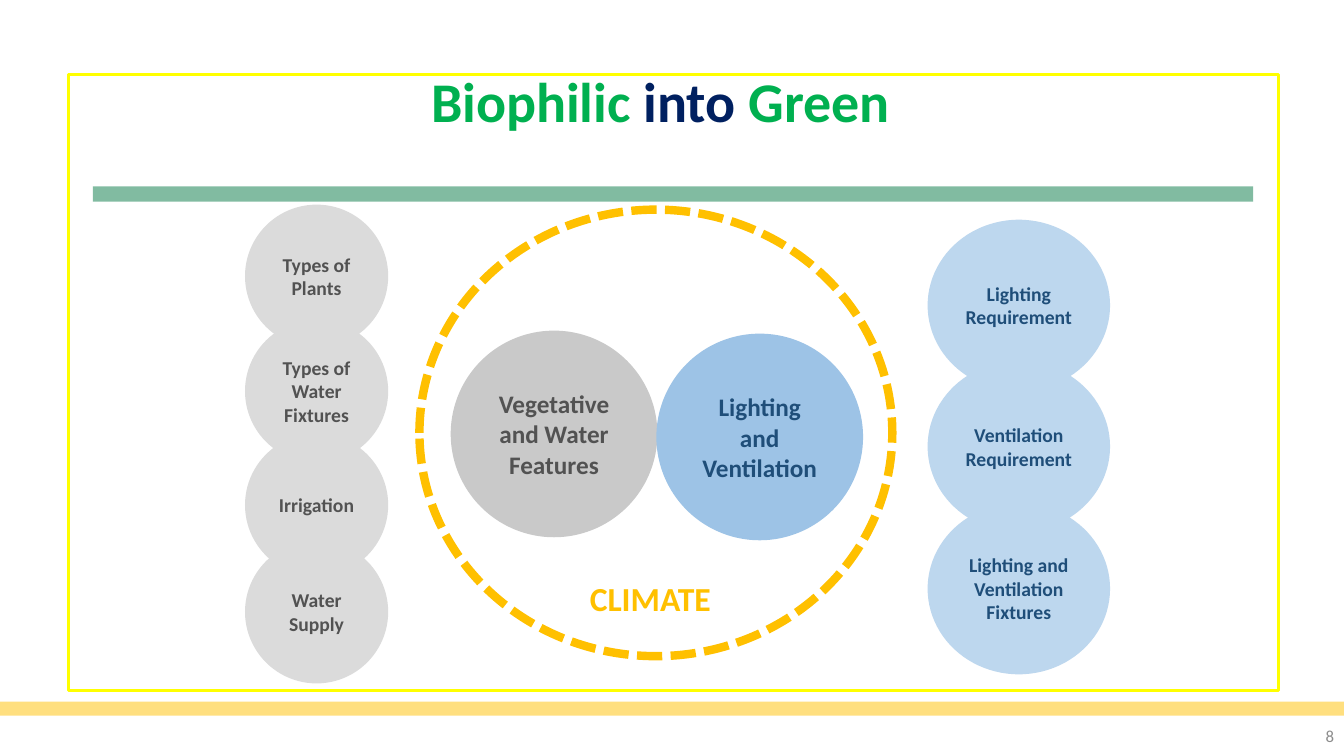
from lxml import etree
from pptx import Presentation
from pptx.dml.color import RGBColor
from pptx.enum.dml import MSO_LINE
from pptx.enum.shapes import MSO_SHAPE
from pptx.enum.text import MSO_ANCHOR, PP_ALIGN
from pptx.oxml.ns import qn
from pptx.util import Inches, Pt

RECTANGLE, OVAL = MSO_SHAPE.RECTANGLE, MSO_SHAPE.OVAL
DASH = MSO_LINE.SQUARE_DOT
SYSTEM_DASH = MSO_LINE.DASH
TOP, MIDDLE = MSO_ANCHOR.TOP, MSO_ANCHOR.MIDDLE
CENTER, RIGHT = PP_ALIGN.CENTER, PP_ALIGN.RIGHT

FONT = "Calibri"
GOLD, GREEN, NAVY = "FFC000", "00B050", "002060"
GREY_TEXT, BLUE_TEXT = "525252", "1F4E79"


def color(hex_code):
    return RGBColor.from_string(hex_code)


def add_figure(slide, kind, box, fill=None, opacity=None, line=None, width=0):
    """Add a preset shape without shadow; opacity is a percentage."""
    shape = slide.shapes.add_shape(kind, *map(Inches, box))
    shape.shadow.inherit = False
    if fill:
        shape.fill.solid()
        shape.fill.fore_color.rgb = color(fill)
    else:
        shape.fill.background()
    if opacity:
        fill_color = shape.fill._xPr.find(qn("a:solidFill"))[0]
        etree.SubElement(fill_color, qn("a:alpha"), val=str(opacity * 1000))
    if line:
        shape.line.color.rgb = color(line)
        shape.line.width = Pt(width)
    else:
        shape.line.fill.background()
    return shape


def write_text(shape, pieces, size, bold=True, align=CENTER, anchor=MIDDLE):
    """Fill the first paragraph with (text, color) runs."""
    frame = shape.text_frame
    frame.word_wrap = True
    frame.vertical_anchor = anchor
    paragraph = frame.paragraphs[0]
    paragraph.alignment = align
    for text, hex_code in pieces:
        run = paragraph.add_run()
        run.text = text
        run.font.name = FONT
        run.font.size = Pt(size)
        run.font.bold = bold
        run.font.color.rgb = color(hex_code)
    return paragraph


def add_label(slide, box, pieces, size, **options):
    text_box = slide.shapes.add_textbox(*map(Inches, box))
    return write_text(text_box, pieces, size, **options)


def add_circle(slide, box, text, fill, text_color, size):
    circle = add_figure(slide, OVAL, box, fill)
    write_text(circle, [(text, text_color)], size)


def add_background(slide, width, height):
    add_figure(slide, RECTANGLE, (0, height - 0.54, width, 0.14), GOLD, 50)
    add_figure(slide, RECTANGLE, (0.68, 0.74, width - 1.33, height - 1.39),
               line="FFFF00", width=2)
    add_figure(slide, RECTANGLE, (0.92, 1.85, width - 1.82, 0.15), "047845", 50)
    add_label(slide, (width - 1.03, height - 0.4, 1.03, 0.39), [("8", "8C8C8C")],
              12, bold=False, align=RIGHT)


def add_title(slide, box):
    pieces = [("Biophilic", GREEN), (" into ", NAVY), ("Green", GREEN)]
    add_label(slide, box, pieces, 40).line_spacing = 0.9


def add_climate_ring(slide, left, top, width, height):
    diameter = 2.05
    add_circle(slide, (left + 0.31, top + 1.2, diameter, diameter),
               "Vegetative and Water Features", "C9C9C9", GREY_TEXT, 18)
    add_circle(slide, (left + 2.35, top + 1.23, diameter, diameter),
               "Lighting and Ventilation", "9DC3E6", BLUE_TEXT, 18)
    ring = add_figure(slide, OVAL, (left, top, width, height), line=GOLD, width=6)
    ring.line.dash_style = SYSTEM_DASH
    ring.line._ln.find(qn("a:prstDash")).set("val", "sysDash")
    add_label(slide, (left - 0.11, top + 3.6, 4.8, 0.5), [("CLIMATE", GOLD)], 24,
              anchor=TOP)


def add_circle_column(slide, left, width, height, items, fill, text_color):
    for top, text in items:
        add_circle(slide, (left, top, width, height), text, fill, text_color, 14)


def main():
    width, height = 13.33, 7.5
    presentation = Presentation()
    presentation.slide_width = Inches(width)
    presentation.slide_height = Inches(height)
    slide = presentation.slides.add_slide(presentation.slide_layouts[6])

    add_background(slide, width, height)
    add_title(slide, (0.8, 0.67, 11.5, 0.73))
    add_climate_ring(slide, 4.16, 2.08, 4.69, 4.43)

    water_features = [(2.03, "Types of Plants"), (3.17, "Types of Water Fixtures"),
                      (4.3, "Irrigation"), (5.36, "Water Supply")]
    add_circle_column(slide, 2.43, 1.42, 1.42, water_features, "DBDBDB", GREY_TEXT)

    air_and_light = [(2.18, "Lighting Requirement"), (3.58, "Ventilation Requirement"),
                     (4.99, "Lighting and Ventilation Fixtures")]
    add_circle_column(slide, 9.2, 1.81, 1.7, air_and_light, "BDD7EE", BLUE_TEXT)

    presentation.save("out.pptx")


if __name__ == "__main__":
    main()
